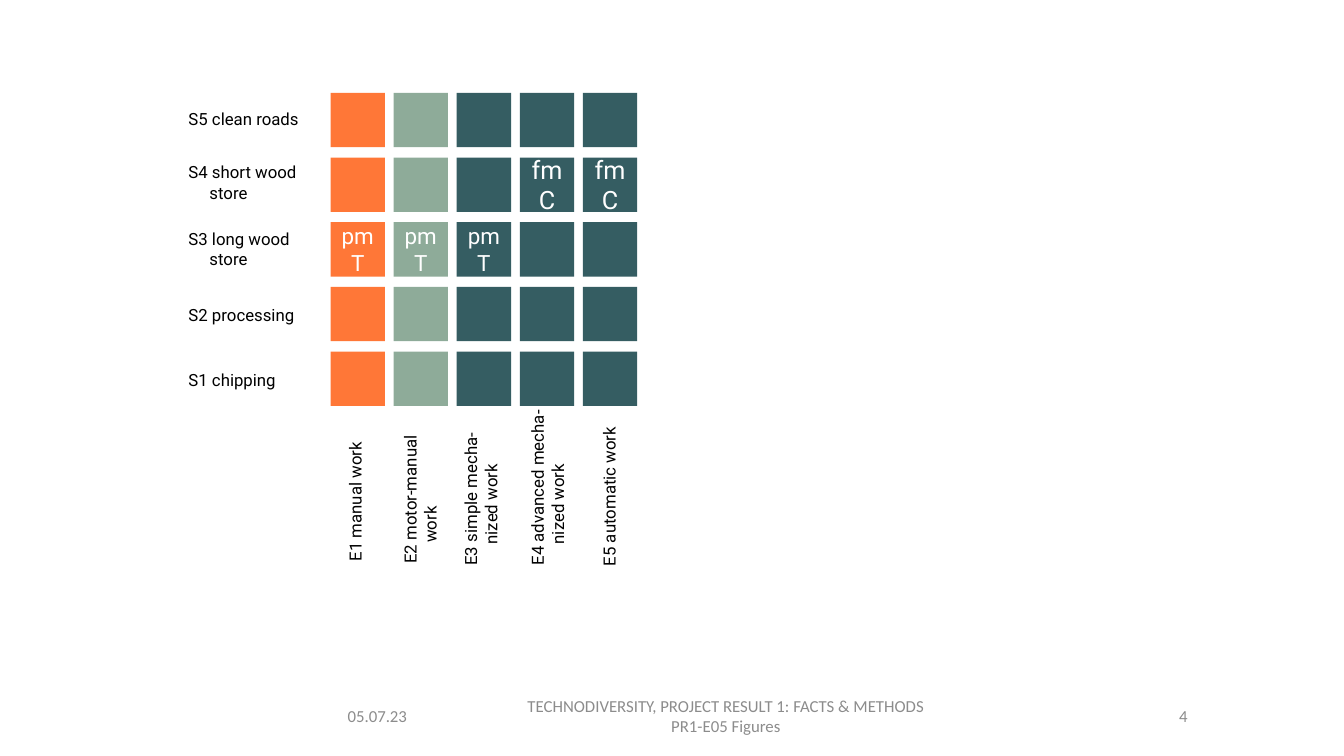
from pptx import Presentation
from pptx import util as u
from pptx.dml.color import RGBColor
from pptx.enum import shapes, text

ORANGE = RGBColor(0xFF, 0x77, 0x37)
SAGE = RGBColor(0x8E, 0xAB, 0x99)
TEAL = RGBColor(0x35, 0x5D, 0x62)
WHITE = RGBColor(0xFF, 0xFF, 0xFF)
BLACK = RGBColor(0, 0, 0)
GREY = RGBColor(0x8C, 0x8C, 0x8C)

LEFT, TOP = 8.33, 2.34
PITCH_X, PITCH_Y = 1.59, 1.63
SIDE = 1.37
ONE_LINE, TWO_LINES = 0.77, 1.28
HANG = 0.53


def write(sp, words, size=12, font="Roboto", color=BLACK,
          align=text.PP_ALIGN.LEFT, anchor=text.MSO_ANCHOR.TOP, indent=0):
    tf = sp.text_frame
    tf.word_wrap = True
    tf.vertical_anchor = anchor
    for i, line in enumerate(words.split("\n")):
        p = tf.paragraphs[0] if i == 0 else tf.add_paragraph()
        p.alignment = align
        if i and indent:
            p._p.get_or_add_pPr().set("marL", str(u.Cm(indent)))
        r = p.add_run()
        r.text = line
        r.font.size = u.Pt(size)
        r.font.name = font
        r.font.color.rgb = color


def add_box(x, y, w, h):
    return s.shapes.add_textbox(u.Cm(x), u.Cm(y), u.Cm(w), u.Cm(h))


prs = Presentation()
prs.slide_width = u.Cm(33.87)
prs.slide_height = u.Cm(19.05)
s = prs.slides.add_slide(prs.slide_layouts[6])

footers = [
    (8.51, 3.4, "05.07.23", text.PP_ALIGN.LEFT),
    (12.34, 11.91, "TECHNODIVERSITY, PROJECT RESULT 1: FACTS & METHODS\nPR1-E05 Figures",
     text.PP_ALIGN.CENTER),
    (24.82, 5.36, "4", text.PP_ALIGN.RIGHT),
]
for x, w, words, align in footers:
    write(add_box(x, 17.53, w, 1.02), words, font="Calibri", color=GREY,
          align=align, anchor=text.MSO_ANCHOR.MIDDLE)

column_colors = [ORANGE, SAGE, TEAL, TEAL, TEAL]
marks = {(1, 3): ("fmC", 18), (1, 4): ("fmC", 18)}
marks.update({(2, col): ("pm\nT", 16) for col in range(3)})
for row in range(5):
    for col, color in enumerate(column_colors):
        sp = s.shapes.add_shape(
            shapes.MSO_SHAPE.RECTANGLE,
            u.Cm(LEFT + col * PITCH_X), u.Cm(TOP + row * PITCH_Y),
            u.Cm(SIDE), u.Cm(SIDE))
        sp.shadow.inherit = False
        sp.fill.solid()
        sp.fill.fore_color.rgb = color
        sp.line.fill.background()
        if (row, col) in marks:
            words, size = marks[row, col]
            write(sp, words, size=size, color=WHITE,
                  align=text.PP_ALIGN.CENTER, anchor=text.MSO_ANCHOR.MIDDLE)

row_labels = [
    (3.0, "S5 clean roads"),
    (4.6, "S4 short wood\nstore"),
    (6.27, "S3 long wood\nstore"),
    (7.93, "S2 processing"),
    (9.58, "S1 chipping"),
]
for center_y, words in row_labels:
    h = TWO_LINES if "\n" in words else ONE_LINE
    write(add_box(4.5, center_y - h / 2, 4.11, h), words, indent=HANG)

column_labels = [
    (8.95, 12.17, 4.45, "E1 manual work"),
    (10.59, 12.45, 4.01, "E2 motor-manual\nwork"),
    (12.12, 12.47, 4.06, "E3 simple mecha-\nnized work"),
    (13.8, 12.22, 4.55, "E4 advanced mecha-\nnized work"),
    (15.35, 12.37, 4.29, "E5 automatic work"),
]
for center_x, center_y, w, words in column_labels:
    h = TWO_LINES if "\n" in words else ONE_LINE
    sp = add_box(center_x - w / 2, center_y - h / 2, w, h)
    sp.rotation = 270
    write(sp, words, indent=HANG)

prs.save("out.pptx")
